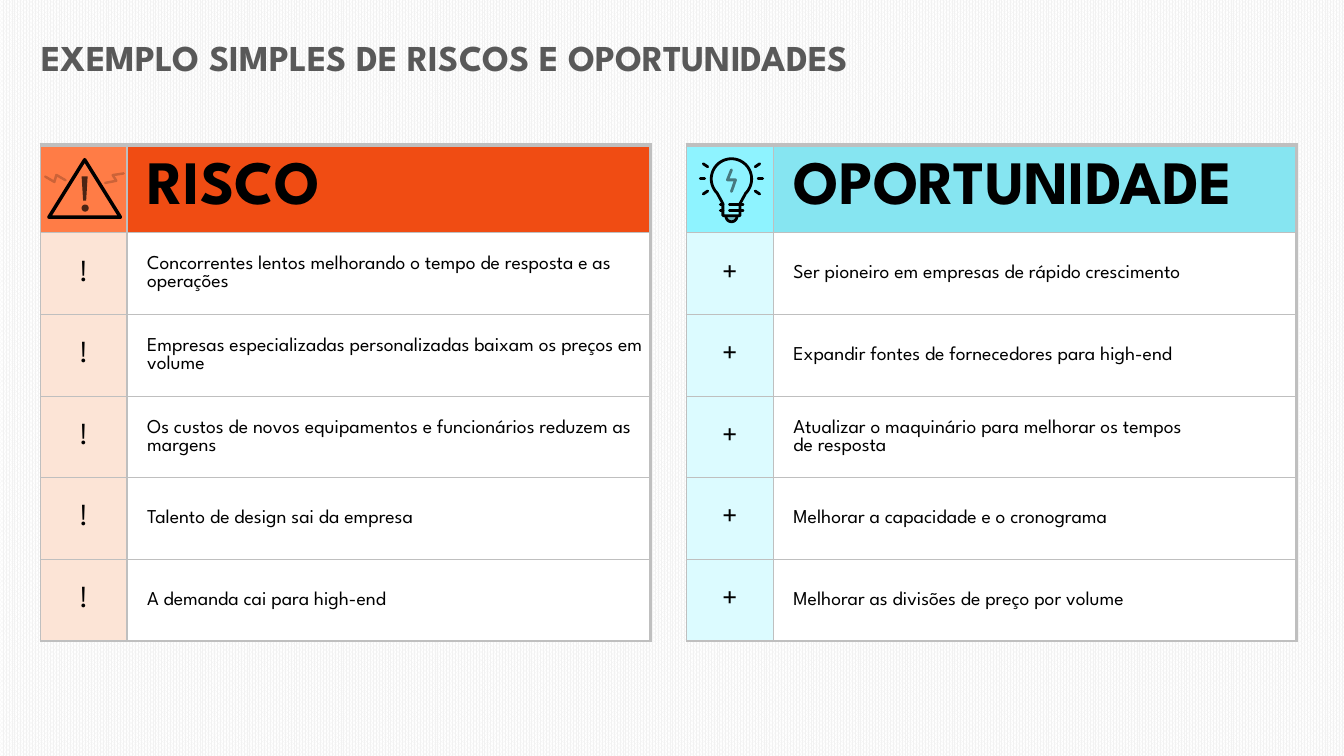
from dataclasses import dataclass
from itertools import product
from math import cos, radians, sin

from lxml.etree import SubElement
from pptx import Presentation
from pptx.dml.color import RGBColor
from pptx.enum.dml import MSO_PATTERN
from pptx.enum.shapes import MSO_CONNECTOR
from pptx.enum.text import MSO_ANCHOR, MSO_AUTO_SIZE, PP_ALIGN
from pptx.oxml.ns import qn
from pptx.util import Emu, Inches, Pt

Point = tuple[float, float]

# The slide is a grid of 1333 columns by 750 rows.
UNIT = Inches(0.01)
COLUMNS, ROWS = 1333, 750
TABLE_TOP, TABLE_WIDTH = 144, 605
ICON_COLUMN, HEADER_ROW, BODY_ROW = 86, 87, 81
TEXT_INDENT, CELL_INSET = 20, 1


@dataclass(frozen=True)
class Theme:
    font: str = "League Spartan"
    ink: str = "000000"
    title_ink: str = "595959"
    border: str = "BFBFBF"
    paper: str = "FFFFFF"
    weave: str = "F2F2F2"
    title_size: float = 26
    heading_size: float = 44
    symbol_size: float = 21
    body_size: float = 14
    thin: float = 1
    right_edge: float = 2.25
    top_edge: float = 3


@dataclass(frozen=True)
class Mark:
    """Icon part in grid units of its header cell; width 0 means a filled outline."""
    points: list[Point]
    width: float = 0
    alpha: int = 100
    closed: bool = False
    rotation: float = 0


@dataclass(frozen=True)
class Panel:
    left: int
    heading: str
    symbol: str
    icon_fill: str
    heading_fill: str
    symbol_fill: str
    items: list[str]
    icon: list[Mark]


THEME = Theme()


def grid(n: float) -> Emu:
    return Emu(round(n * UNIT))


def rgb(code: str) -> RGBColor:
    return RGBColor.from_string(code)


def arc(x: float, y: float, radius: float, start: int, end: int) -> list[Point]:
    return [(x + radius * cos(radians(a)), y + radius * sin(radians(a)))
            for a in range(start, end + 1, 5)]


def warning_icon() -> list[Mark]:
    return [
        Mark([(8.5, 25), (12, 35), (18, 31), (21.5, 41)], 1.75, 20, rotation=319.5),
        Mark([(79, 24), (70.5, 31), (76.5, 34), (68, 41.5)], 1.75, 20, rotation=30.7),
        Mark([(8.5, 71.5), (44, 14.5), (79.5, 71.5)], 2.5, closed=True),
        Mark([(41, 31), (47, 31), (45.5, 55), (42.5, 55)], alpha=70, closed=True),
        Mark(arc(44.5, 62.5, 3.5, 0, 355), alpha=70, closed=True),
    ]


def bulb_icon() -> list[Mark]:
    x, y = 44.5, 33.5
    glass = arc(x, y, 20, 135, 405) + [(53, 58), (53, 70), (36, 70), (36, 58)]
    cup = arc(x, 70.5, 5.5, 0, 180)
    bars = [Mark([(start, row), (end, row)], 2)
            for row, (start, end) in product((59, 64.5), ((33.5, 36), (42.5, 56)))]
    rays = [Mark([(x + side * 26.5, y + rise * 12.5 / 12),
                  (x + side * 31, y + rise * 15.5 / 12)], 2)
            if rise == 0 else
            Mark([(x + side * 23.5, y + rise), (x + side * 28, y + rise * 1.25)], 2)
            for side, rise in product((-1, 1), (-12, 0, 12))]
    bolt = Mark([(44.5, 24.5), (40.5, 34.5), (48.5, 34.5), (44.5, 46)], 2, 50)
    return [Mark(cup, alpha=24, closed=True), Mark(cup, 2),
            Mark(glass, 2, closed=True), *bars, *rays, bolt]


PANELS = [
    Panel(40, "RISCO", "!", "FF7C46", "F04C13", "FCE4D6", [
        "Concorrentes lentos melhorando o tempo de resposta e as operações",
        "Empresas especializadas personalizadas baixam os preços em volume",
        "Os custos de novos equipamentos e funcionários reduzem as margens",
        "Talento de design sai da empresa",
        "A demanda cai para high-end",
    ], warning_icon()),
    Panel(681, "OPORTUNIDADE", "+", "8EF3FF", "86E5F1", "DCFBFF", [
        "Ser pioneiro em empresas de rápido crescimento",
        "Expandir fontes de fornecedores para high-end",
        "Atualizar o maquinário para melhorar os tempos \vde resposta",
        "Melhorar a capacidade e o cronograma",
        "Melhorar as divisões de preço por volume",
    ], bulb_icon()),
]


def write(tf, text: str, size: float, bold: bool = False, color: str = THEME.ink) -> None:
    tf.text = text
    for r in tf.paragraphs[0].runs:
        r.font.name, r.font.size, r.font.bold = THEME.font, Pt(size), bold
        r.font.color.rgb = rgb(color)


def style_cell(cell, fill: str, top: float, right: float) -> None:
    tc_pr = cell._tc.get_or_add_tcPr()
    edges = {"L": THEME.thin, "R": right, "T": top, "B": THEME.thin}
    for edge, width in edges.items():
        ln = SubElement(tc_pr, qn(f"a:ln{edge}"), w=str(Pt(width)))
        SubElement(SubElement(ln, qn("a:solidFill")), qn("a:srgbClr"), val=THEME.border)
    cell.fill.solid()
    cell.fill.fore_color.rgb = rgb(fill)
    cell.vertical_anchor = MSO_ANCHOR.MIDDLE
    cell.margin_left = cell.margin_right = cell.margin_top = grid(CELL_INSET)
    cell.margin_bottom = 0


def draw_table(slide, panel: Panel) -> None:
    heights = [HEADER_ROW] + [BODY_ROW] * len(panel.items)
    table = slide.shapes.add_table(len(heights), 2, grid(panel.left), grid(TABLE_TOP),
                                   grid(TABLE_WIDTH), grid(sum(heights))).table
    table.first_row = table.horz_banding = False
    for column, width in zip(table.columns, (ICON_COLUMN, TABLE_WIDTH - ICON_COLUMN)):
        column.width = grid(width)
    for i, (height, text) in enumerate(zip(heights, [panel.heading, *panel.items])):
        header = i == 0
        table.rows[i].height = grid(height)
        key, body = table.cell(i, 0), table.cell(i, 1)
        top = THEME.top_edge if header else THEME.thin
        style_cell(key, panel.icon_fill if header else panel.symbol_fill, top, THEME.thin)
        style_cell(body, panel.heading_fill if header else THEME.paper, top, THEME.right_edge)
        body.margin_left = grid(TEXT_INDENT)
        write(body.text_frame, text, THEME.heading_size if header else THEME.body_size, header)
        if not header:
            write(key.text_frame, panel.symbol, THEME.symbol_size)
            key.text_frame.paragraphs[0].alignment = PP_ALIGN.CENTER


def draw_mark(slide, mark: Mark, left: int) -> None:
    points = [(grid(left + x), grid(TABLE_TOP + y)) for x, y in mark.points]
    if len(points) == 2:
        sp = slide.shapes.add_connector(MSO_CONNECTOR.STRAIGHT, *points[0], *points[1])
    else:
        builder = slide.shapes.build_freeform(*points[0])
        builder.add_line_segments(points[1:], close=mark.closed)
        sp = builder.convert_to_shape()
        sp.rotation = mark.rotation
        if mark.width:
            sp.fill.background()
        else:
            sp.fill.solid()
            sp.fill.fore_color.rgb = rgb(THEME.ink)
    sp_pr = sp._element.spPr
    if mark.width:
        sp.line.width = Pt(mark.width)
        sp.line.color.rgb = rgb(THEME.ink)
        ln = sp_pr.find(qn("a:ln"))
        ln.set("cap", "rnd")
        SubElement(ln, qn("a:round"))
    else:
        sp.line.fill.background()
    SubElement(sp_pr, qn("a:effectLst"))
    if mark.alpha < 100:
        for color in sp_pr.iter(qn("a:srgbClr")):
            SubElement(color, qn("a:alpha"), val=str(mark.alpha * 1000))


def main() -> None:
    prs = Presentation()
    prs.slide_width, prs.slide_height = grid(COLUMNS), grid(ROWS)
    slide = prs.slides.add_slide(prs.slide_layouts[6])
    fill = slide.background.fill
    fill.patterned()
    fill.pattern = MSO_PATTERN.PERCENT_80
    fill.fore_color.rgb, fill.back_color.rgb = rgb(THEME.weave), rgb(THEME.paper)

    title = slide.shapes.add_textbox(grid(31), grid(30), grid(866), grid(54))
    title.text_frame.word_wrap = True
    title.text_frame.auto_size = MSO_AUTO_SIZE.SHAPE_TO_FIT_TEXT
    write(title.text_frame, "EXEMPLO SIMPLES DE RISCOS E OPORTUNIDADES",
          THEME.title_size, True, THEME.title_ink)

    for panel in PANELS:
        draw_table(slide, panel)
        for mark in panel.icon:
            draw_mark(slide, mark, panel.left)
    prs.save("out.pptx")


if __name__ == "__main__":
    main()
